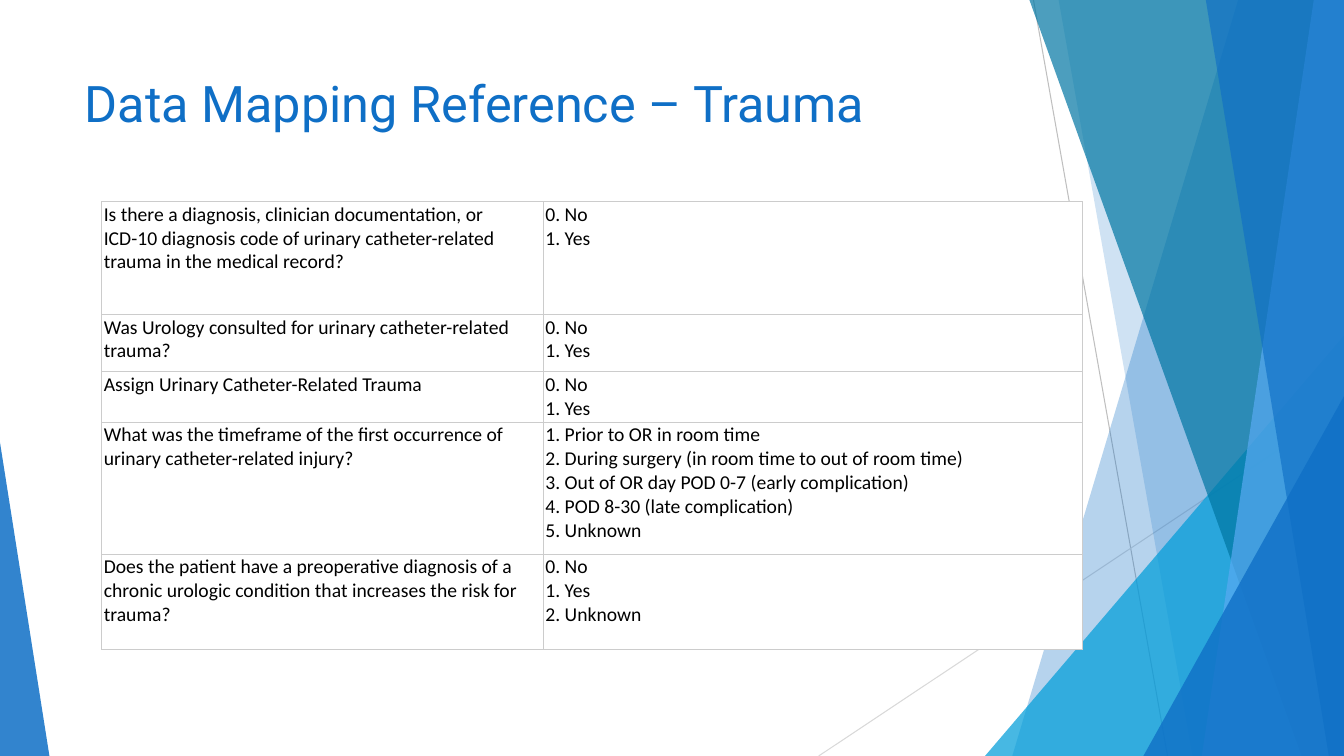
from lxml import etree
from pptx import Presentation
from pptx import util as u
from pptx.dml.color import RGBColor
from pptx.enum import shapes, text
from pptx.oxml.ns import qn

COLORS = {
    "blue": "0F6FC6", "cyan": "009DD9", "teal": "0076A3", "sky": "59AAF2",
    "line_dark": "BFBFBF", "line_light": "D9D9D9", "border": "CCCCCC",
    "white": "FFFFFF", "black": "000000",
}

QUESTIONS = [
    ("Is there a diagnosis, clinician documentation, or ICD-10 diagnosis code "
     "of urinary catheter-related trauma in the medical record?",
     ["0. No", "1. Yes"]),
    ("Was Urology consulted for urinary catheter-related trauma?",
     ["0. No", "1. Yes"]),
    ("Assign Urinary Catheter-Related Trauma",
     ["0. No", "1. Yes"]),
    ("What was the timeframe of the first occurrence of urinary "
     "catheter-related injury?",
     ["1. Prior to OR in room time",
      "2. During surgery (in room time to out of room time)",
      "3. Out of OR day POD 0-7 (early complication)",
      "4. POD 8-30 (late complication)",
      "5. Unknown"]),
    ("Does the patient have a preoperative diagnosis of a chronic urologic "
     "condition that increases the risk for trauma?",
     ["0. No", "1. Yes", "2. Unknown"]),
]
ROW_HEIGHTS = [1.12, 0.57, 0.5, 1.31, 0.94]
COL_WIDTHS = [4.38, 5.35]


def rgb(name):
    return RGBColor.from_string(COLORS[name])


def style_shape(sp, color, opacity):
    sp.shadow.inherit = False
    sp.line.fill.background()
    sp.fill.solid()
    sp.fill.fore_color.rgb = rgb(color)
    clr = sp.fill._xPr.find(".//" + qn("a:srgbClr"))
    etree.SubElement(clr, qn("a:alpha"), val=str(opacity * 1000))


def add_line(s, start, end, color):
    cx = s.shapes.add_connector(shapes.MSO_CONNECTOR.STRAIGHT,
                                *(u.Inches(v) for v in start + end))
    cx.line.color.rgb = rgb(color)
    cx.line.width = u.Pt(0.75)
    etree.SubElement(cx._element.spPr, qn("a:effectLst"))


def add_band(s, box, top_x, bottom_x, color, opacity):
    """Slanted left edge, straight right edge; x values count from the box."""
    x, y, w, h = box
    points = [(x + top_x, y), (x + w, y), (x + w, y + h), (x + bottom_x, y + h)]
    points = [(u.Inches(px), u.Inches(py)) for px, py in points]
    fb = s.shapes.build_freeform(*points[0])
    fb.add_line_segments(points[1:], close=True)
    style_shape(fb.convert_to_shape(), color, opacity)


def add_triangle(s, box, apex, color, opacity):
    sp = s.shapes.add_shape(shapes.MSO_SHAPE.ISOSCELES_TRIANGLE,
                            *(u.Inches(v) for v in box))
    sp.adjustments[0] = apex
    style_shape(sp, color, opacity)


def corner(box, w, h):
    """Box of the given size in the bottom right corner."""
    return box[0] + box[2] - w, box[1] + box[3] - h, w, h


def add_right_facets(s, box):
    x, y, w, h = box
    add_line(s, (x + 2.13, y), (x + 3.46, y + h), "line_dark")
    add_line(s, (x + w, y + 4.03), (x, y + h), "line_light")
    add_band(s, box, 4.16, 1.92, "blue", 30)
    add_band(s, box, 2.38, 3.71, "blue", 20)
    add_triangle(s, corner(box, 3.56, 4.17), 1, "cyan", 72)
    add_band(s, box, 2.09, 4.79, "teal", 70)
    add_band(s, box, 4.91, 3.8, "sky", 70)
    add_band(s, box, 3.84, 5.06, "blue", 65)
    add_triangle(s, corner(box, 1.99, 3.57), 1, "blue", 80)


def add_run(p, words, size, font, color):
    r = p.add_run()
    r.text = words
    r.font.size = u.Pt(size)
    r.font.name = font
    r.font.color.rgb = rgb(color)


def add_title(s, box, words):
    title = s.shapes.title
    title.left, title.top, title.width, title.height = (u.Inches(v) for v in box)
    tf = title.text_frame
    tf.word_wrap = True
    tf.auto_size = text.MSO_AUTO_SIZE.NONE
    tf.vertical_anchor = text.MSO_ANCHOR.TOP
    p = tf.paragraphs[0]
    p.alignment = text.PP_ALIGN.LEFT
    add_run(p, words, 36, "Roboto", "blue")


def set_borders(cell):
    tc_pr = cell._tc.get_or_add_tcPr()
    for i, side in enumerate(("lnL", "lnR", "lnT", "lnB")):
        ln = etree.Element(qn("a:" + side), w=str(u.Pt(0.75)))
        fill = etree.SubElement(ln, qn("a:solidFill"))
        etree.SubElement(fill, qn("a:srgbClr"), val=COLORS["border"])
        tc_pr.insert(i, ln)


def fill_cell(cell, lines):
    cell.margin_left = cell.margin_right = u.Inches(0.02)
    cell.margin_top = cell.margin_bottom = u.Inches(0.01)
    cell.vertical_anchor = text.MSO_ANCHOR.TOP
    cell.fill.solid()
    cell.fill.fore_color.rgb = rgb("white")
    set_borders(cell)
    p = cell.text_frame.paragraphs[0]
    for i, line in enumerate(lines):
        if i:
            p.add_line_break()
        add_run(p, line, 14, "Calibri", "black")


def add_question_table(s, box):
    frame = s.shapes.add_table(len(QUESTIONS), len(COL_WIDTHS),
                               *(u.Inches(v) for v in box))
    table = frame.table
    table.first_row = table.horz_banding = False
    for col, width in zip(table.columns, COL_WIDTHS):
        col.width = u.Inches(width)
    for row, height, (question, answers) in zip(table.rows, ROW_HEIGHTS, QUESTIONS):
        row.height = u.Inches(height)
        fill_cell(row.cells[0], [question])
        fill_cell(row.cells[1], answers)


def main():
    prs = Presentation()
    prs.slide_width, prs.slide_height = u.Inches(13.33), u.Inches(7.5)
    s = prs.slides.add_slide(prs.slide_layouts[5])
    # Background facets
    add_right_facets(s, (8.12, 0, 5.21, 7.5))
    add_triangle(s, (0, 4.39, 0.49, 3.11), 0, "blue", 85)
    # Title and table
    add_title(s, (0.74, 0.67, 9.4, 1.44), "Data Mapping Reference – Trauma")
    add_question_table(s, (1.01, 2, sum(COL_WIDTHS), sum(ROW_HEIGHTS)))
    prs.save("out.pptx")


if __name__ == "__main__":
    main()
